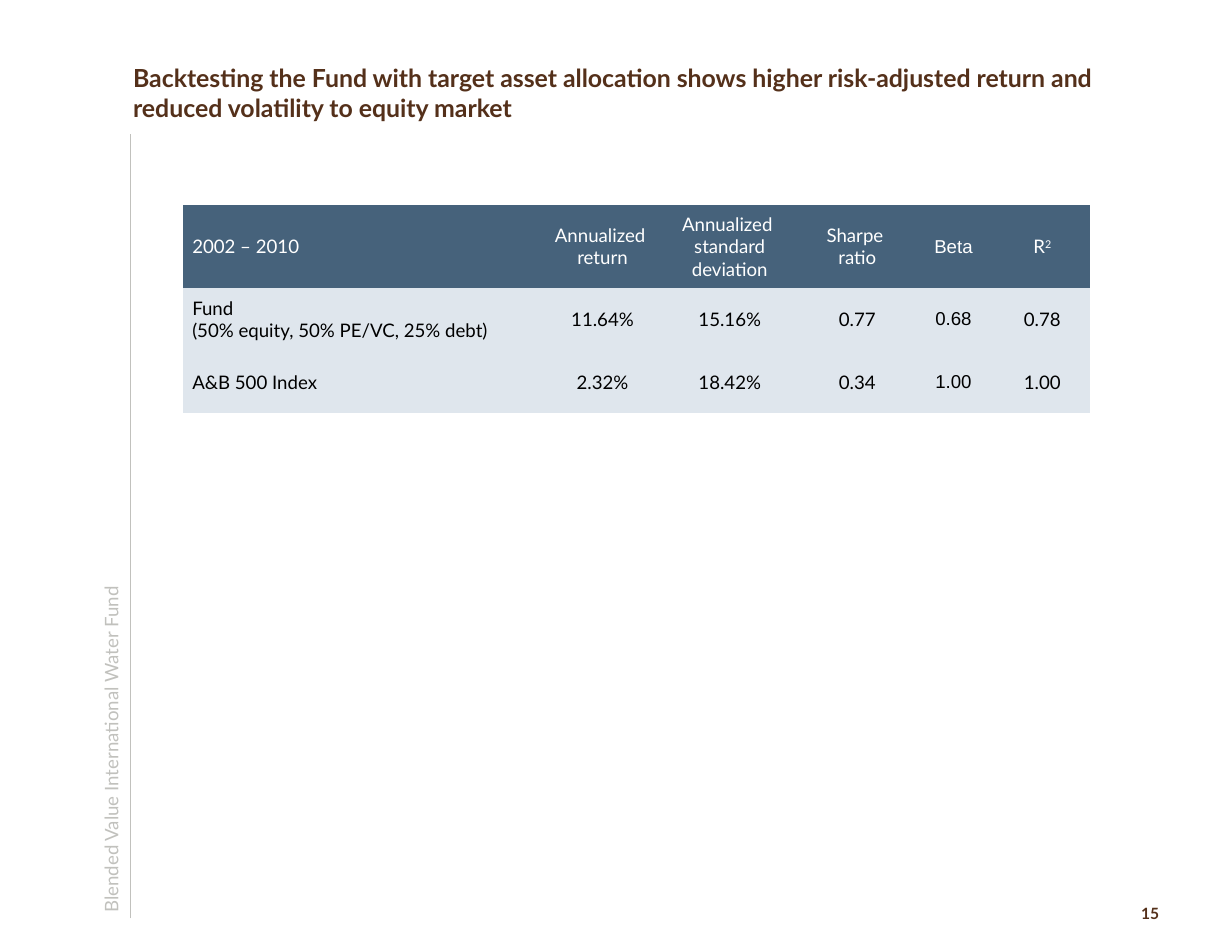
from dataclasses import dataclass, field

from lxml import etree
from pptx import Presentation
from pptx.dml.color import RGBColor
from pptx.enum.shapes import MSO_CONNECTOR
from pptx.enum.text import MSO_ANCHOR, PP_ALIGN
from pptx.oxml.ns import qn
from pptx.util import Cm, Pt

LINE = MSO_CONNECTOR.STRAIGHT
TOP, MIDDLE, BOTTOM = MSO_ANCHOR.TOP, MSO_ANCHOR.MIDDLE, MSO_ANCHOR.BOTTOM
LEFT, CENTER = PP_ALIGN.LEFT, PP_ALIGN.CENTER
PLAIN = "{2D5ABB26-0587-4C30-8999-92F81FD0307C}"  # table style without borders


@dataclass(frozen=True)
class Theme:
    brown: str = "54301A"
    grey: str = "C1C1BD"
    slate: str = "46627B"
    pale: str = "DFE6ED"
    white: str = "FFFFFF"
    black: str = "000000"
    font: str = "Lato"
    alt: str = "Arial"
    title: int = 16
    body: int = 12
    small: int = 10


THEME = Theme()


@dataclass(frozen=True)
class Label:
    text: str
    box: tuple[float, float, float, float]
    size: int
    color: str
    bold: bool = False
    turn: int = 0
    frame: dict = field(default_factory=dict)


@dataclass(frozen=True)
class Column:
    width: float
    head: str
    values: tuple[str, str]
    font: str = THEME.font
    power: str = ""


LABELS = (
    Label("15", (25.63, 20.37, 0.97, 0.69), THEME.small, THEME.brown, bold=True,
          frame={"margin_left": Cm(0.25), "margin_right": Cm(0.25),
                 "margin_top": Cm(0.13), "margin_bottom": Cm(0.13),
                 "word_wrap": False}),
    Label("Blended Value International Water Fund", (-4.52, 13.51, 14.07, 0.51),
          THEME.body, THEME.grey, turn=270, frame={"margin_left": Cm(0.1)}),
    Label("Backtesting the Fund with target asset allocation shows higher "
          "risk-adjusted return and reduced volatility to equity market",
          (3.02, 0.03, 23.5, 2.74), THEME.title, THEME.brown, bold=True,
          frame={"vertical_anchor": BOTTOM}),
)

COLUMNS = (
    Column(8.28, "2002 – 2010",
           ("Fund\n(50% equity, 50% PE/VC, 25% debt)", "A&B 500 Index")),
    Column(2.49, "Annualized \vreturn", ("11.64%", "2.32%")),
    Column(3.28, "Annualized \vstandard deviation", ("15.16%", "18.42%")),
    Column(2.51, "Sharpe \vratio", ("0.77", "0.34")),
    Column(1.85, "Beta", ("0.68", "1.00"), font=THEME.alt),
    Column(2.18, "R", ("0.78", "1.00"), power="2"),
)
HEIGHTS = (1.88, 1.42, 1.42)
SPOT = (4.14, 4.65)

NO_INSET = {"margin_left": 0, "margin_right": 0,
            "margin_top": 0, "margin_bottom": 0}
FRAME = NO_INSET | {"word_wrap": True, "vertical_anchor": TOP}
CELL = NO_INSET | {"vertical_anchor": MIDDLE}


def apply(target, values: dict) -> None:
    for name, value in values.items():
        setattr(target, name, value)


def style(frame, size: int, color: str, font: str, bold: bool = False,
          align=LEFT) -> None:
    """Format every paragraph and run in a text frame."""
    form = {"size": Pt(size), "name": font, "bold": bold}
    for para in frame.paragraphs:
        para.alignment = align
        for run in para.runs:
            apply(run.font, form)
            run.font.color.rgb = RGBColor.from_string(color)


def add_label(slide, label: Label) -> None:
    shape = slide.shapes.add_textbox(*map(Cm, label.box))
    shape.rotation = label.turn
    frame = shape.text_frame
    apply(frame, FRAME | label.frame)
    frame.text = label.text
    style(frame, label.size, label.color, THEME.font, label.bold)


def add_rule(slide) -> None:
    """Draw the upright line beside the content."""
    rule = slide.shapes.add_connector(LINE, *map(Cm, (2.95, 20.83, 2.95, 3.05)))
    rule.line.color.rgb = RGBColor.from_string(THEME.grey)
    rule.line.width = Pt(0.75)
    etree.SubElement(rule._element.spPr, qn("a:effectLst"))


def fill_cell(cell, text: str, head: bool, first: bool, column: Column) -> None:
    apply(cell, CELL | {"margin_left": Cm(0.22 if first else 0)})
    cell.fill.solid()
    cell.fill.fore_color.rgb = RGBColor.from_string(
        THEME.slate if head else THEME.pale)
    frame = cell.text_frame
    frame.text = text
    if head and column.power:
        run = frame.paragraphs[0].add_run()
        run.text = column.power
        run.font._element.set("baseline", "30000")
    style(frame, THEME.body, THEME.white if head else THEME.black,
          column.font, align=LEFT if first else CENTER)


def add_grid(slide) -> None:
    """Build the table of returns and risk."""
    width = sum(column.width for column in COLUMNS)
    shape = slide.shapes.add_table(
        len(HEIGHTS), len(COLUMNS), *map(Cm, (*SPOT, width, sum(HEIGHTS))))
    table = shape.table
    table._tbl.tblPr.find(qn("a:tableStyleId")).text = PLAIN
    for row, height in zip(table.rows, HEIGHTS):
        row.height = Cm(height)
    for x, column in enumerate(COLUMNS):
        table.columns[x].width = Cm(column.width)
        for y, text in enumerate((column.head, *column.values)):
            fill_cell(table.cell(y, x), text, y == 0, x == 0, column)


def main() -> None:
    deck = Presentation()
    apply(deck, {"slide_width": Cm(27.94), "slide_height": Cm(21.59)})
    slide = deck.slides.add_slide(deck.slide_layouts[6])
    add_rule(slide)
    for label in LABELS:
        add_label(slide, label)
    add_grid(slide)
    deck.save("out.pptx")


if __name__ == "__main__":
    main()
